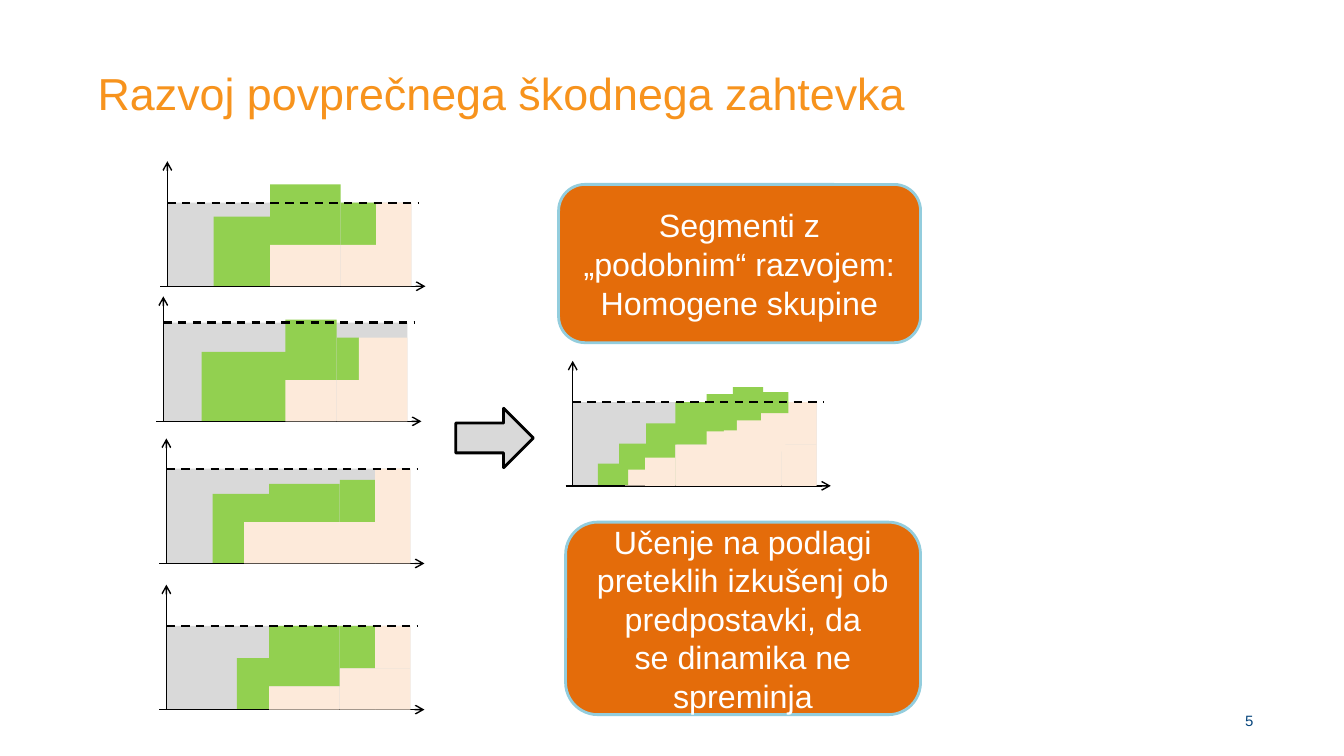
from lxml import etree
from pptx import Presentation
from pptx.dml.color import RGBColor
from pptx.enum.dml import MSO_LINE
from pptx.enum.shapes import MSO_CONNECTOR, MSO_SHAPE
from pptx.enum.text import MSO_ANCHOR, PP_ALIGN
from pptx.oxml.ns import qn
from pptx.util import Inches, Pt

STRAIGHT = MSO_CONNECTOR.STRAIGHT
RECT, ROUNDED = MSO_SHAPE.RECTANGLE, MSO_SHAPE.ROUNDED_RECTANGLE
RIGHT_ARROW = MSO_SHAPE.RIGHT_ARROW
DASH = MSO_LINE.DASH
TOP, MIDDLE = MSO_ANCHOR.TOP, MSO_ANCHOR.MIDDLE
LEFT, CENTER, RIGHT = PP_ALIGN.LEFT, PP_ALIGN.CENTER, PP_ALIGN.RIGHT

BLACK = RGBColor(0x00, 0x00, 0x00)
WHITE = RGBColor(0xFF, 0xFF, 0xFF)
NAVY = RGBColor(0x08, 0x46, 0x7D)
AMBER = RGBColor(0xF7, 0x93, 0x1D)
ORANGE = RGBColor(0xE4, 0x6C, 0x0A)
SKY = RGBColor(0x93, 0xCD, 0xDD)
GREY = RGBColor(0xD9, 0xD9, 0xD9)
GREEN = RGBColor(0x92, 0xD0, 0x50)
PEACH = RGBColor(0xFD, 0xEA, 0xDA)

PAID_TAIL = (1.72, 0.83, 0.35, 0.42)
RESERVE_TAIL = (2.07, 0.83, 0.35, 0.42)
RESERVE_FOOT = [(1.72, 0.41, 0.35, 0.41), (2.07, 0.41, 0.35, 0.41)]
STEPS_DOWN = [(1.33, 0.54), (1.63, 0.65), (1.87, 0.77), (1.81, 0.62), (1.5, 0.55)]
STEPS_UP = [(0.25, 0.22), (0.73, 0.62), (1.33, 0.91), (1.59, 0.98), (1.84, 0.93)]

SEGMENTS = [
    (1.66, 2.84, 0.83,
     [PAID_TAIL, (1.02, 1.01, 0.7, 0.6), (0.46, 0.69, 0.56, 0.69)],
     [RESERVE_TAIL, (1.02, 0.41, 0.7, 0.41)]),
    (1.62, 4.18, 0.98,
     [(1.72, 0.83, 0.22, 0.42), (1.21, 1.01, 0.51, 0.6), (0.38, 0.69, 0.86, 0.69)],
     [(1.94, 0.83, 0.48, 0.42), (1.21, 0.41, 0.51, 0.41)]),
    (1.65, 5.59, 0.94,
     [PAID_TAIL, (1.02, 0.79, 0.7, 0.38), (0.46, 0.69, 0.56, 0.69)],
     [(2.07, 0.94, 0.35, 0.53), (0.77, 0.41, 0.95, 0.41)]),
    (1.65, 7.04, 0.83,
     [PAID_TAIL, (1.02, 0.83, 0.7, 0.6), (0.7, 0.51, 0.32, 0.51)],
     [RESERVE_TAIL, (1.02, 0.23, 0.7, 0.23)]),
]
COMBINED = (
    5.68, 4.82, 0.83,
    [PAID_TAIL, (1.02, 0.83, 0.7, 0.42), (0.46, 0.42, 0.56, 0.42)],
    [RESERVE_TAIL, (1.02, 0.41, 0.7, 0.41), (0.72, 0.28, 0.3, 0.28),
     (0.52, 0.16, 0.3, 0.16)] + [(x, y, 0.3, 0.28) for x, y in STEPS_DOWN],
    [(x, y, 0.3, 0.21) for x, y in STEPS_UP])


def add_box(s, kind, x, y, w, h, fill, line=None):
    """Add a filled preset shape, outlined at 2 points if a line colour is given."""
    sp = s.shapes.add_shape(kind, Inches(x), Inches(y), Inches(w), Inches(h))
    sp.shadow.inherit = False
    sp.fill.solid()
    sp.fill.fore_color.rgb = fill
    if line is None:
        sp.line.fill.background()
    else:
        sp.line.color.rgb = line
        sp.line.width = Pt(2)
    return sp


def add_line(s, x1, y1, x2, y2, dashed=False):
    """Add a dashed level line or an axis ending in an arrowhead."""
    c = s.shapes.add_connector(STRAIGHT, Inches(x1), Inches(y1), Inches(x2), Inches(y2))
    c.line.color.rgb = BLACK
    c.line.width = Pt(1.5 if dashed else 1)
    if dashed:
        c.line.dash_style = DASH
    else:
        etree.SubElement(c.line._get_or_add_ln(), qn("a:tailEnd"), type="arrow")
    etree.SubElement(c._element.spPr, qn("a:effectLst"))


def set_text(sp, text, size, color, align, anchor):
    """Write and format the paragraphs of a shape."""
    tf = sp.text_frame
    tf.word_wrap = True
    tf.vertical_anchor = anchor
    tf.text = text
    for p in tf.paragraphs:
        p.alignment = align
        for r in p.runs:
            r.font.name = "Arial"
            r.font.size = Pt(size)
            r.font.color.rgb = color


def add_label(s, x, y, w, h, text, size, color, align, anchor):
    """Add a text box."""
    sp = s.shapes.add_textbox(Inches(x), Inches(y), Inches(w), Inches(h))
    set_text(sp, text, size, color, align, anchor)


def add_callout(s, x, y, w, h, text):
    """Add an orange rounded box with centred text."""
    sp = add_box(s, ROUNDED, x, y, w, h, ORANGE, SKY)
    set_text(sp, text, 23, WHITE, CENTER, MIDDLE)


def add_development(s, x, base, level, paid, reserve, late_paid=()):
    """Add one grouped claim development diagram with its axes and level."""
    g = s.shapes.add_group_shape()

    def add_blocks(blocks, fill):
        """Place blocks given as offset from the axis, height of top, width, height."""
        for dx, top, w, h in blocks:
            add_box(g, RECT, x + dx, base - top, w, h, fill)

    add_blocks([(0, level, 2.42, level)], GREY)
    add_blocks(paid, GREEN)
    add_line(g, x - 0.07, base, x + 2.56, base)
    add_line(g, x, base, x, base - 1.24)
    add_blocks(reserve[:2] + RESERVE_FOOT + reserve[2:], PEACH)
    add_blocks(late_paid, GREEN)
    add_line(g, x, base - level, x + 2.49, base - level, dashed=True)


def main():
    """Build the slide and save it."""
    prs = Presentation()
    prs.slide_width, prs.slide_height = Inches(13.33), Inches(7.5)
    s = prs.slides.add_slide(prs.slide_layouts[6])
    add_label(s, 11.95, 6.95, 0.58, 0.4, "5", 10.7, NAVY, RIGHT, MIDDLE)
    add_label(s, 0.87, 0.6, 10.96, 1.26, "Razvoj povprečnega škodnega zahtevka",
              32, AMBER, LEFT, TOP)
    for diagram in [COMBINED] + SEGMENTS:
        add_development(s, *diagram)
    add_box(s, RIGHT_ARROW, 4.52, 4.05, 0.77, 0.59, GREY, BLACK)
    add_callout(s, 5.54, 1.83, 3.59, 1.57,
                "Segmenti z „podobnim“ razvojem: Homogene skupine")
    add_callout(s, 5.61, 5.18, 3.52, 1.91,
                "Učenje na podlagi preteklih izkušenj ob predpostavki, da\n"
                "se dinamika ne spreminja")
    prs.save("out.pptx")


if __name__ == "__main__":
    main()
